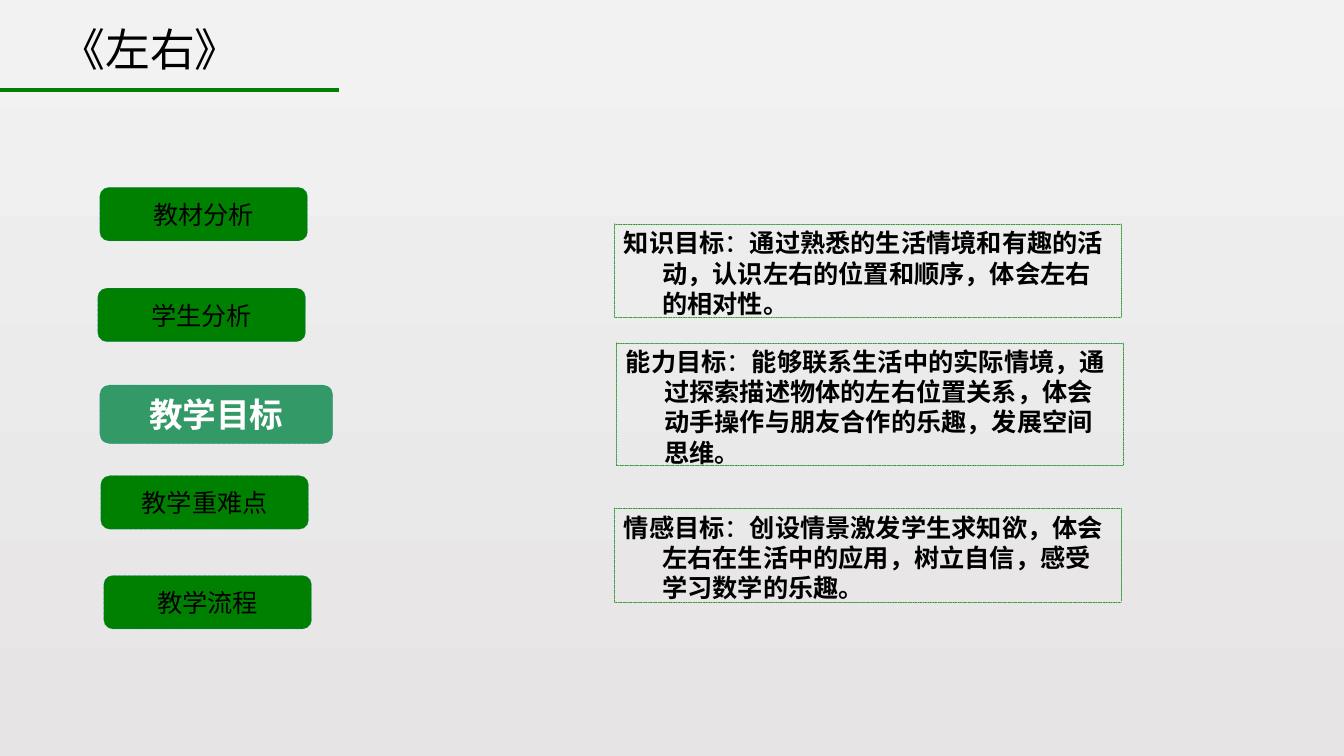
from dataclasses import dataclass
from lxml.etree import SubElement
from pptx import Presentation
from pptx.dml.color import RGBColor
from pptx.enum.dml import MSO_LINE
from pptx.enum.shapes import MSO_CONNECTOR, MSO_SHAPE
from pptx.enum.text import MSO_ANCHOR, MSO_AUTO_SIZE, PP_ALIGN
from pptx.oxml.ns import qn
from pptx.shapes.autoshape import Shape
from pptx.slide import Slide
from pptx.text.text import _Paragraph
from pptx.util import Inches, Pt

GREEN = RGBColor(0x00, 0x80, 0x00)
JADE = RGBColor(0x33, 0x99, 0x66)
TEAL = RGBColor(0x00, 0x80, 0x80)
BLACK = RGBColor(0x00, 0x00, 0x00)
WHITE = RGBColor(0xFF, 0xFF, 0xFF)
PALE = RGBColor(0xF2, 0xF2, 0xF2)
GREY = RGBColor(0xE6, 0xE4, 0xE4)
LATIN = "Arial"
HAN = "Noto Sans CJK SC"


@dataclass
class Tab:
    text: str
    left: float
    top: float
    width: float = 2.06
    height: float = 0.53
    fill: RGBColor = GREEN
    color: RGBColor = BLACK
    size: int = 18
    bold: bool = False


@dataclass
class Goal:
    head: str
    body: str
    left: float
    top: float
    height: float


TABS = [
    Tab("教材分析", 0.99, 1.86),
    Tab("学生分析", 0.97, 2.86),
    Tab("教学目标", 0.99, 3.82, 2.31, 0.58, JADE, WHITE, 24, True),
    Tab("教学重难点", 1, 4.72),
    Tab("教学流程", 1.03, 5.71),
]
GOALS = [
    Goal("知识目标", "通过熟悉的生活情境和有趣的活动，认识左右的位置和顺序，体会左右的相对性。", 6.09, 2.22, 0.93),
    Goal("能力目标", "能够联系生活中的实际情境，通过探索描述物体的左右位置关系，体会动手操作与朋友合作的乐趣，发展空间思维。", 6.11, 3.4, 1.22),
    Goal("情感目标", "创设情景激发学生求知欲，体会左右在生活中的应用，树立自信，感受学习数学的乐趣。", 6.09, 5.04, 0.93),
]


def apply(item: object, values: dict) -> None:
    for name, value in values.items():
        setattr(item, name, value)


def write(para: _Paragraph, text: str, size: int, color: RGBColor = BLACK,
          bold: bool = False, face: str = LATIN) -> None:
    run = para.add_run()
    run.text = text
    apply(run.font, {"size": Pt(size), "bold": bold, "name": face})
    run.font.color.rgb = color
    SubElement(run.font._element, qn("a:ea"), typeface=HAN)


def outline(shape: Shape, color: RGBColor) -> None:
    shape.shadow.inherit = False
    shape.line.color.rgb = color
    apply(shape.line, {"width": Pt(0.25), "dash_style": MSO_LINE.ROUND_DOT})
    shape._element.spPr.find(qn("a:ln")).set("cap", "rnd")


def draw_tab(slide: Slide, tab: Tab) -> None:
    shape = slide.shapes.add_shape(
        MSO_SHAPE.ROUNDED_RECTANGLE, Inches(tab.left), Inches(tab.top),
        Inches(tab.width), Inches(tab.height))
    outline(shape, TEAL)
    shape.fill.solid()
    shape.fill.fore_color.rgb = tab.fill
    frame = shape.text_frame
    apply(frame, {"word_wrap": False, "vertical_anchor": MSO_ANCHOR.MIDDLE})
    para = frame.paragraphs[0]
    para.alignment = PP_ALIGN.CENTER
    write(para, tab.text, tab.size, tab.color, tab.bold)


def draw_goal(slide: Slide, goal: Goal) -> None:
    shape = slide.shapes.add_shape(
        MSO_SHAPE.RECTANGLE, Inches(goal.left), Inches(goal.top),
        Inches(5.03), Inches(goal.height))
    outline(shape, GREEN)
    shape.fill.background()
    frame = shape.text_frame
    apply(frame, {
        "word_wrap": True, "vertical_anchor": MSO_ANCHOR.MIDDLE,
        "margin_left": Inches(0.1), "margin_right": Inches(0.1),
        "margin_top": Inches(0.05), "margin_bottom": 0,
    })
    para = frame.paragraphs[0]
    para.alignment = PP_ALIGN.LEFT
    props = para._p.get_or_add_pPr()
    for name, value in {"marL": 0.38, "indent": -0.38}.items():
        props.set(name, str(int(Inches(value))))
    write(para, goal.head, 18, bold=True)
    write(para, "：", 18)
    write(para, goal.body, 18, bold=True, face=HAN)


def draw_title(slide: Slide) -> None:
    title = slide.shapes.title
    apply(title, {"left": Inches(0.5), "top": Inches(0.17),
                  "width": Inches(3.02), "height": Inches(0.63)})
    frame = title.text_frame
    apply(frame, {"word_wrap": True, "auto_size": MSO_AUTO_SIZE.NONE,
                  "vertical_anchor": MSO_ANCHOR.MIDDLE})
    para = frame.paragraphs[0]
    para.alignment = PP_ALIGN.LEFT
    write(para, "《左右》", 32, face=HAN)
    rule = slide.shapes.add_connector(
        MSO_CONNECTOR.STRAIGHT, 0, Inches(0.89), Inches(3.36), Inches(0.89))
    rule.line.color.rgb = GREEN
    rule.line.width = Pt(2.75)
    SubElement(rule._element.spPr, qn("a:effectLst"))


def paint(slide: Slide) -> None:
    fill = slide.background.fill
    fill.gradient()
    fill.gradient_angle = 270
    for stop, color in zip(fill.gradient_stops, (PALE, GREY)):
        stop.color.rgb = color


def main() -> None:
    deck = Presentation()
    apply(deck, {"slide_width": Inches(13.33), "slide_height": Inches(7.5)})
    slide = deck.slides.add_slide(deck.slide_layouts[5])
    paint(slide)
    draw_title(slide)
    for tab in TABS:
        draw_tab(slide, tab)
    for goal in GOALS:
        draw_goal(slide, goal)
    deck.save("out.pptx")


if __name__ == "__main__":
    main()
